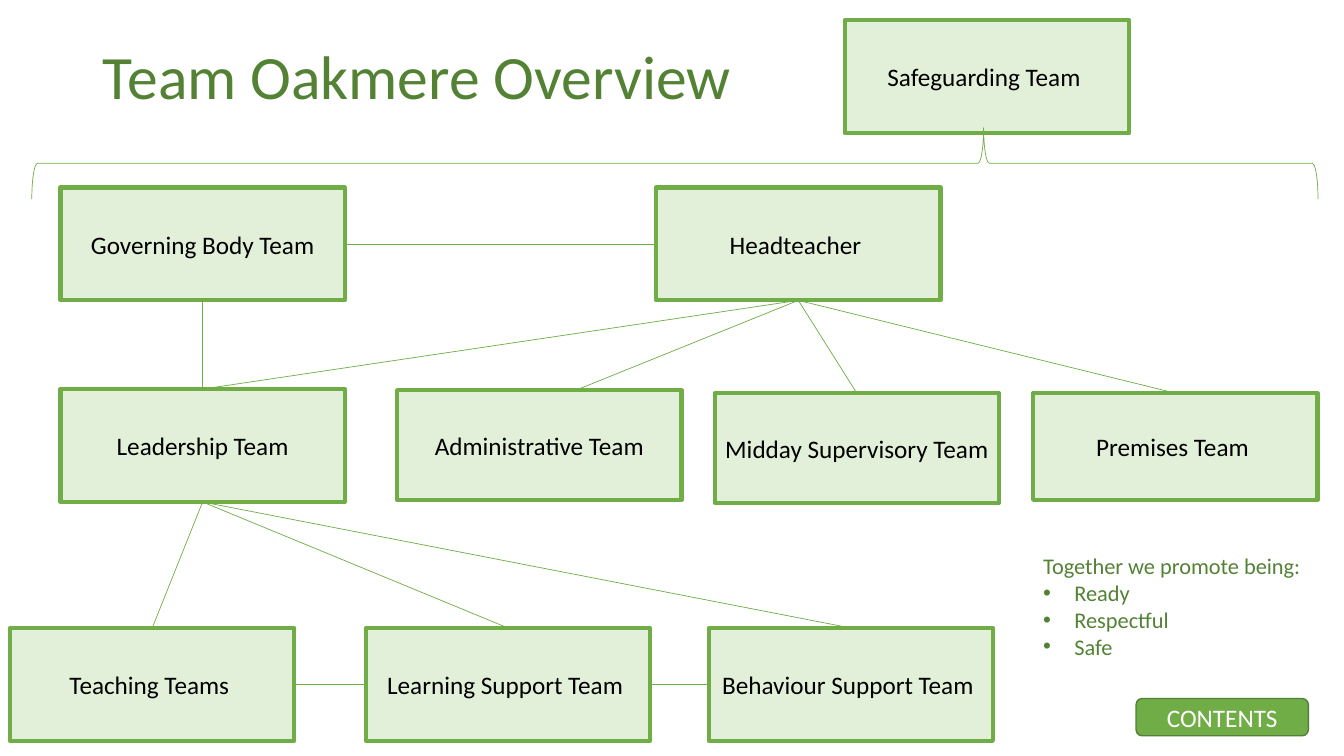
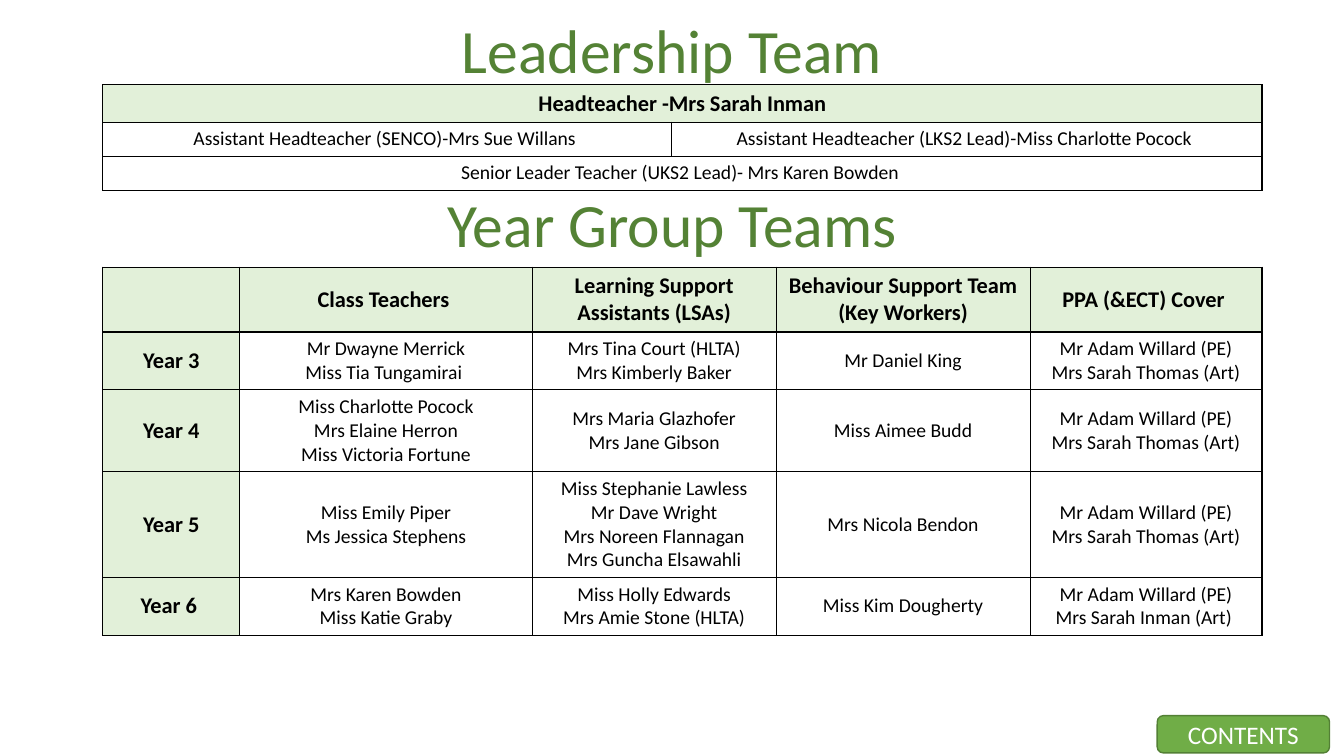
from dataclasses import dataclass

from lxml import etree
from pptx import Presentation
from pptx import util as u
from pptx.dml.color import RGBColor
from pptx.enum import shapes, text
from pptx.oxml import ns

DARK_GREEN = RGBColor(0x54, 0x82, 0x35)
GREEN = RGBColor(0x70, 0xAD, 0x47)
BUTTON_EDGE = RGBColor(0x53, 0x80, 0x35)
PALE_GREEN = RGBColor(0xE2, 0xF0, 0xD9)
BLACK = RGBColor(0, 0, 0)
WHITE = RGBColor(0xFF, 0xFF, 0xFF)
FONT = "Calibri"
CELL = u.Inches(0.1)
COLUMNS, ROWS = 133.33, 75
TEAM_WIDTH, TEAM_HEIGHT = 28.2, 11.2
TOP, LEFT, BOTTOM, RIGHT = range(4)
CENTER = text.PP_ALIGN.CENTER
MIDDLE = text.MSO_ANCHOR.MIDDLE

TEAMS = {
    "Safeguarding": ("Safeguarding Team ", 83.8, 2, TEAM_HEIGHT),
    "Governors": ("Governing Body Team", 6, 18.6, TEAM_HEIGHT),
    "Headteacher": ("Headteacher ", 65.1, 18.6, TEAM_HEIGHT),
    "Leadership": ("Leadership Team", 6, 38.6, TEAM_HEIGHT),
    "Administration": ("Administrative Team", 39.4, 38.7, 10.9),
    "Midday": ("Midday Supervisory Team", 70.9, 39, 10.9),
    "Premises": ("Premises Team ", 102.5, 39, 10.6),
    "Teaching": ("Teaching Teams ", 1, 62.3, TEAM_HEIGHT),
    "Learning": ("Learning Support Team ", 36.3, 62.3, TEAM_HEIGHT),
    "Behaviour": ("Behaviour Support Team ", 70.3, 62.3, TEAM_HEIGHT),
}
SIDE_LINKS = [("Governors", "Headteacher", 0.25), ("Teaching", "Learning", 0.5),
              ("Learning", "Behaviour", 0.5)]
DOWN_LINKS = [("Governors", "Leadership"), ("Headteacher", "Leadership"),
              ("Headteacher", "Midday"), ("Headteacher", "Premises"),
              ("Leadership", "Teaching"), ("Leadership", "Learning"),
              ("Leadership", "Behaviour")]

LEADERS = [
    ["Headteacher -Mrs Sarah Inman", None],
    ["Assistant Headteacher (SENCO)-Mrs Sue Willans ",
     "Assistant Headteacher (LKS2 Lead)-Miss Charlotte Pocock "],
    ["Senior Leader Teacher (UKS2 Lead)- Mrs Karen Bowden ", None],
]
COVER = "Mr Adam Willard (PE)\nMrs Sarah Thomas (Art)"
YEAR_GROUPS = [
    ["", "Class Teachers ", "Learning Support Assistants (LSAs)",
     "Behaviour Support Team\n(Key Workers)", "PPA (&ECT) Cover "],
    ["Year 3", "Mr Dwayne Merrick\nMiss Tia Tungamirai ",
     "Mrs Tina Court (HLTA)\nMrs Kimberly Baker", "Mr Daniel King", COVER],
    ["Year 4", "Miss Charlotte Pocock\nMrs Elaine Herron\nMiss Victoria Fortune",
     "Mrs Maria Glazhofer\nMrs Jane Gibson", "Miss Aimee Budd", COVER],
    ["Year 5", "Miss Emily Piper\nMs Jessica Stephens",
     "Miss Stephanie Lawless\nMr Dave Wright\nMrs Noreen Flannagan\nMrs Guncha Elsawahli",
     "Mrs Nicola Bendon", COVER],
    ["Year 6 ", "Mrs Karen Bowden\nMiss Katie Graby",
     "Miss Holly Edwards\nMrs Amie Stone (HLTA)", "Miss Kim Dougherty",
     "Mr Adam Willard (PE)\nMrs Sarah Inman (Art) "],
]


@dataclass
class Box:
    """A region measured in grid columns and rows."""
    left: float
    top: float
    width: float
    height: float

    def inner(self, left, top, width, height):
        """Return a box placed relative to this one."""
        return Box(self.left + left, self.top + top, width, height)

    def lengths(self):
        """Return left, top, width and height as slide lengths."""
        return [u.Emu(int(value * CELL))
                for value in (self.left, self.top, self.width, self.height)]


PAGE = Box(0, 0, COLUMNS, ROWS)


def write(frame, content, size, color, bold=False, align=CENTER, spacing=None):
    """Fill a text frame with one formatted paragraph per line."""
    for index, line in enumerate(content.split("\n")):
        paragraph = frame.add_paragraph() if index else frame.paragraphs[0]
        paragraph.alignment = align
        if spacing:
            paragraph.line_spacing = spacing
        run = paragraph.add_run()
        run.text = line
        run.font.name, run.font.size, run.font.bold = FONT, u.Pt(size), bold
        run.font.color.rgb = color


def format_title(shape, box, content, align=CENTER):
    """Place a heading and give it the shared title style."""
    shape.left, shape.top, shape.width, shape.height = box.lengths()
    frame = shape.text_frame
    frame.word_wrap = True
    frame.auto_size = text.MSO_AUTO_SIZE.NONE
    frame.vertical_anchor = MIDDLE
    write(frame, content, 44, DARK_GREEN, align=align, spacing=0.9)


def add_panel(slide, box, content, kind, fill, edge, weight, color):
    """Add a filled shape with a centred label."""
    shape = slide.shapes.add_shape(kind, *box.lengths())
    shape.shadow.inherit = False
    shape.fill.solid()
    shape.fill.fore_color.rgb = fill
    shape.line.color.rgb = edge
    shape.line.width = u.Pt(weight)
    shape.text_frame.word_wrap = True
    shape.text_frame.vertical_anchor = MIDDLE
    write(shape.text_frame, content, 18, color)
    return shape


def add_contents_button(slide, box):
    """Add the contents button."""
    add_panel(slide, box, "CONTENTS", shapes.MSO_SHAPE.ROUNDED_RECTANGLE,
              GREEN, BUTTON_EDGE, 1, WHITE)


def add_link(slide, start, start_side, end, end_side, weight=0.5):
    """Join two team boxes, or a box and a point, with a straight line."""
    line = slide.shapes.add_connector(shapes.MSO_CONNECTOR.STRAIGHT, 0, 0, 0, 0)
    line.begin_connect(start, start_side)
    if end_side is None:
        line.end_x, line.end_y = end
    else:
        line.end_connect(end, end_side)
    line.line.color.rgb = GREEN
    line.line.width = u.Pt(weight)
    etree.SubElement(line._element.spPr, ns.qn("a:effectLst"))


def add_team_chart(slide, box):
    """Draw the team boxes, the lines between them and the brace."""
    teams = {}
    for name, (label, left, top, height) in TEAMS.items():
        teams[name] = add_panel(slide, box.inner(left, top, TEAM_WIDTH, height), label,
                                shapes.MSO_SHAPE.RECTANGLE, PALE_GREEN, GREEN, 3, BLACK)
    for start, end, weight in SIDE_LINKS:
        add_link(slide, teams[start], RIGHT, teams[end], LEFT, weight)
    for start, end in DOWN_LINKS:
        add_link(slide, teams[start], BOTTOM, teams[end], TOP)
    office = teams["Administration"]
    landing = office.left + int(office.width * 0.63), office.top
    add_link(slide, teams["Headteacher"], BOTTOM, landing, None)

    brace = slide.shapes.add_shape(shapes.MSO_SHAPE.LEFT_BRACE,
                                   *box.inner(63.4, -47.6, 7.1, 127.6).lengths())
    brace.rotation = 90
    brace.adjustments[0], brace.adjustments[1] = 0.08, 0.26
    brace.shadow.inherit = False
    brace.fill.background()
    brace.line.color.rgb = GREEN
    brace.line.width = u.Pt(0.5)


def add_values(slide, box):
    """List the values that the team promotes."""
    frame = slide.shapes.add_textbox(*box.lengths()).text_frame
    frame.word_wrap = True
    frame.auto_size = text.MSO_AUTO_SIZE.SHAPE_TO_FIT_TEXT
    write(frame, "Together we promote being:\nReady\nRespectful\nSafe", 16, DARK_GREEN,
          align=text.PP_ALIGN.LEFT)
    for paragraph in frame.paragraphs[1:]:
        properties = paragraph._p.get_or_add_pPr()
        indent = u.Inches(0.31)
        properties.set("marL", str(int(indent)))
        properties.set("indent", str(-int(indent)))
        etree.SubElement(properties, ns.qn("a:buFont"), typeface="Arial")
        etree.SubElement(properties, ns.qn("a:buChar"), char="•")


def add_borders(cell):
    """Give a cell a thin black line on each side."""
    properties = cell._tc.get_or_add_tcPr()
    for index, side in enumerate(("lnL", "lnR", "lnT", "lnB")):
        line = etree.Element(ns.qn(f"a:{side}"), w=str(int(u.Pt(1))))
        fill = etree.SubElement(line, ns.qn("a:solidFill"))
        etree.SubElement(fill, ns.qn("a:srgbClr"), val=str(BLACK))
        properties.insert(index, line)


def add_staff_table(slide, box, widths, heights, rows, header_column, anchor):
    """Add a bordered table; None joins a cell to the one before it."""
    table = slide.shapes.add_table(len(rows), len(widths), *box.lengths()).table
    table.first_row = table.horz_banding = False
    for column, width in zip(table.columns, widths):
        column.width = int(width * CELL)
    for row, height in zip(table.rows, heights):
        row.height = int(height * CELL)
    for y, row in enumerate(rows):
        for x, content in enumerate(row):
            cell = table.cell(y, x)
            header = y == 0 or (header_column and x == 0)
            cell.fill.solid()
            cell.fill.fore_color.rgb = PALE_GREEN if header else WHITE
            cell.vertical_anchor = anchor
            add_borders(cell)
            if content is None:
                table.cell(y, x - 1).merge(cell)
            elif content:
                write(cell.text_frame, content, 16 if header else 14, BLACK, header)


def add_overview(presentation):
    """Build the slide with the team chart."""
    slide = presentation.slides.add_slide(presentation.slide_layouts[5])
    format_title(slide.shapes.title, PAGE.inner(9.2, 4, 72, 7.8),
                 "Team Oakmere Overview", text.PP_ALIGN.LEFT)
    add_team_chart(slide, PAGE)
    add_values(slide, PAGE.inner(102.5, 54.3, 30.8, 11.8))
    add_contents_button(slide, PAGE.inner(112.7, 69.3, 17.1, 3.7))


def add_staff(presentation):
    """Build the slide with the leadership and year group tables."""
    slide = presentation.slides.add_slide(presentation.slide_layouts[5])
    format_title(slide.shapes.title, PAGE.inner(9.2, 20.1, 115, 4.9), "Year Group Teams")
    heading = slide.shapes.add_textbox(0, 0, CELL, CELL)
    format_title(heading, PAGE.inner(9.2, 1, 115, 8.7), "Leadership Team")
    add_staff_table(slide, PAGE.inner(10.2, 8.4, 115, 10.3), [56.4, 58.6],
                    [3.7, 3.3, 3.3], LEADERS, False, text.MSO_ANCHOR.TOP)
    add_staff_table(slide, PAGE.inner(10.2, 26.5, 115, 36), [13.6, 29, 24.2, 25.2, 23],
                    [6.4, 5.7, 8, 10.5, 5.7], YEAR_GROUPS, True, MIDDLE)
    add_contents_button(slide, PAGE.inner(114.8, 71, 17.1, 3.7))


def main():
    """Build and save the presentation."""
    presentation = Presentation()
    presentation.slide_width = int(COLUMNS * CELL)
    presentation.slide_height = ROWS * CELL
    add_overview(presentation)
    add_staff(presentation)
    presentation.save("out.pptx")


if __name__ == "__main__":
    main()
